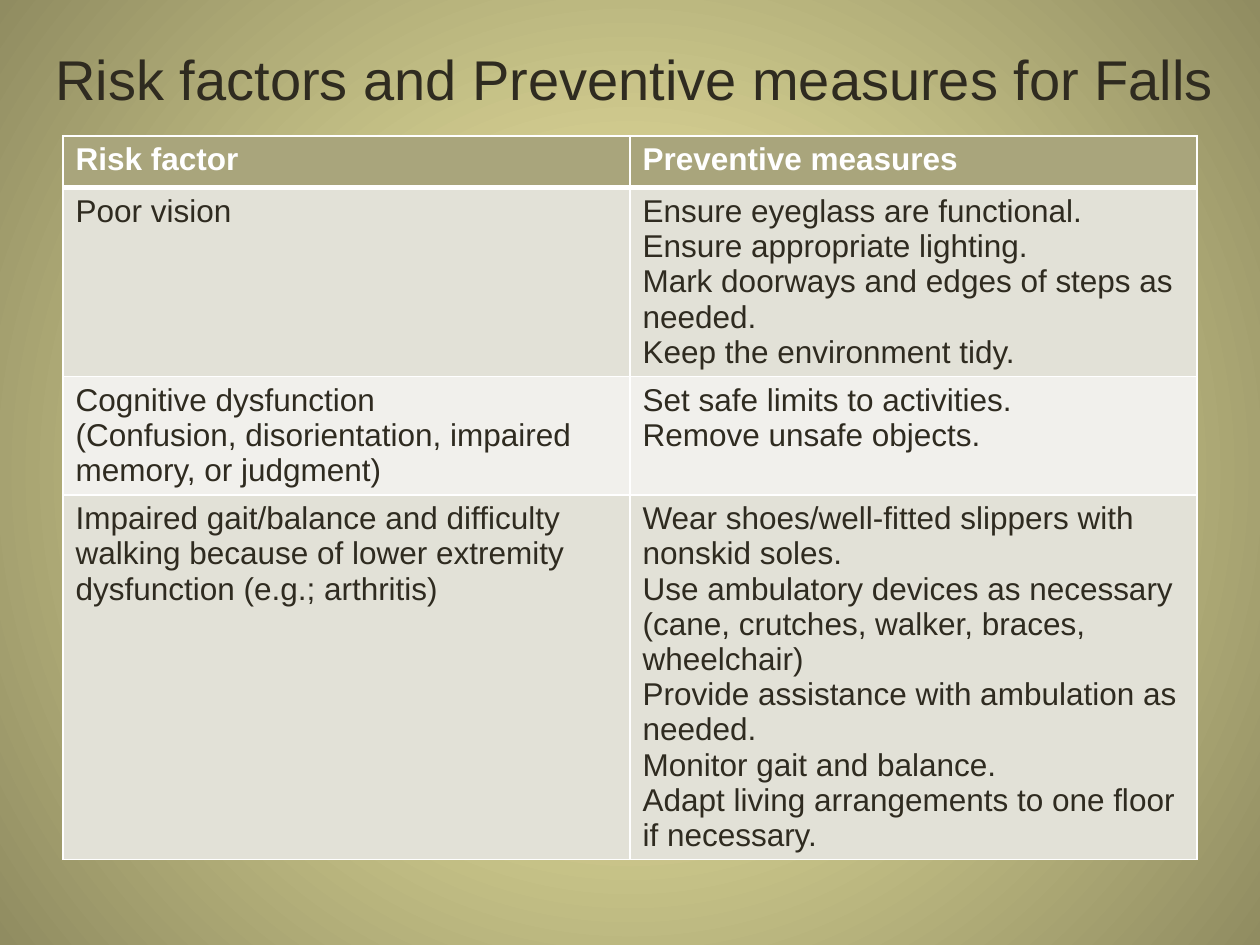
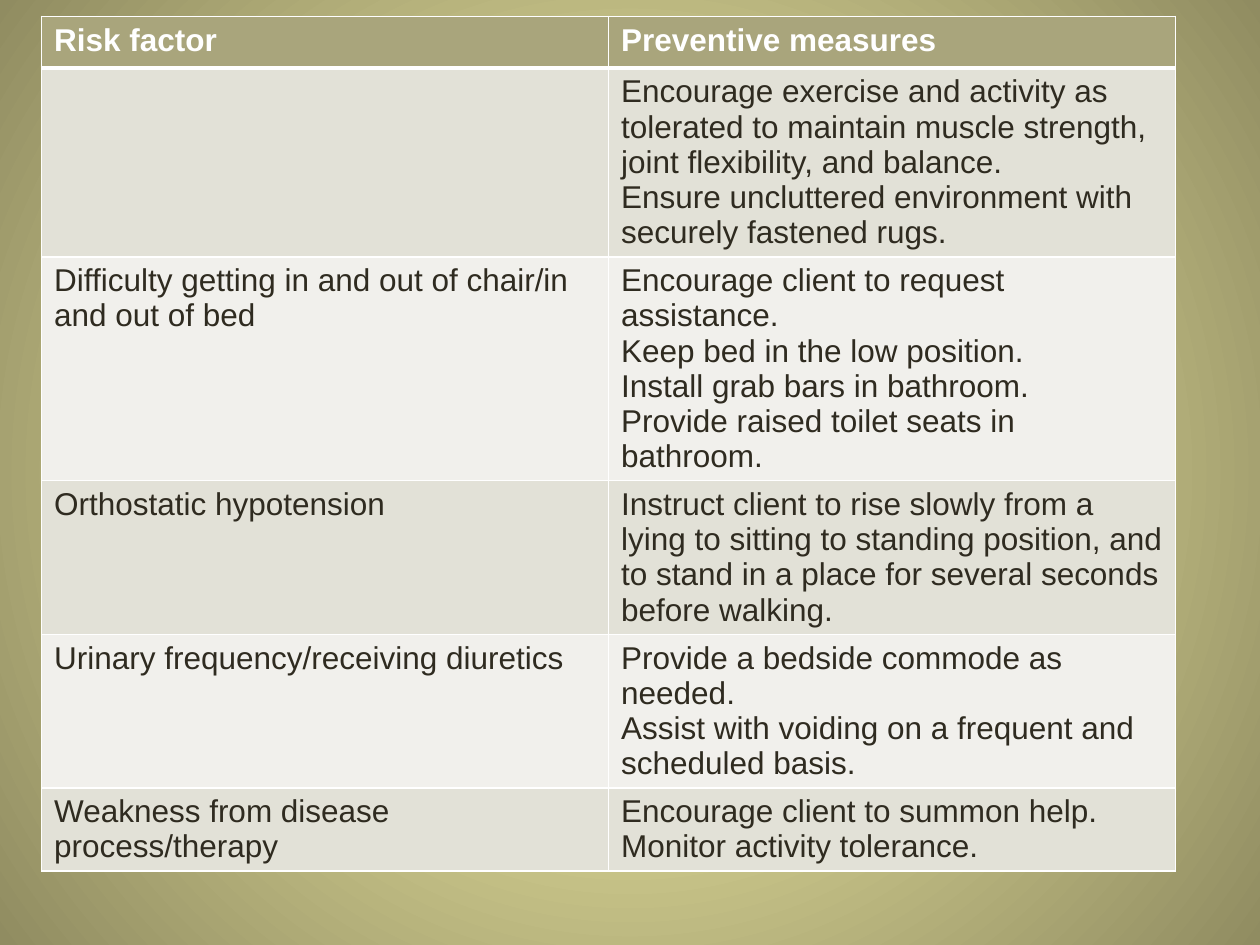
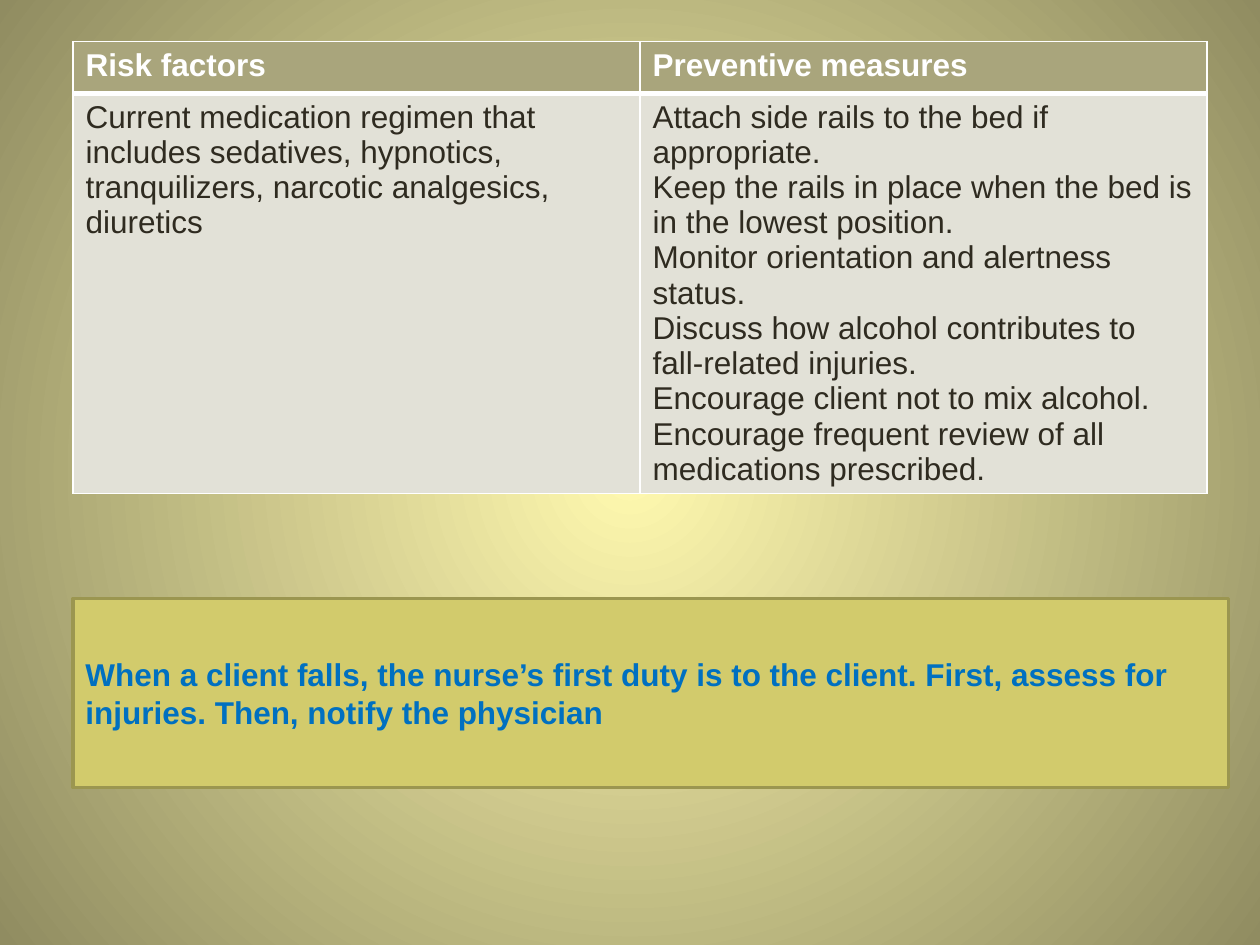
from lxml.etree import SubElement
from pptx import Presentation
from pptx.dml.color import RGBColor
from pptx.enum.shapes import MSO_SHAPE
from pptx.enum.text import MSO_ANCHOR, PP_ALIGN
from pptx.oxml.ns import qn
from pptx.util import Inches, Pt

GLOW = RGBColor(0xFF, 0xF9, 0xAF)
OLIVE = RGBColor(0x90, 0x8C, 0x61)
INK = RGBColor(0x2F, 0x2B, 0x20)
WHITE = RGBColor(0xFF, 0xFF, 0xFF)
HEADER = RGBColor(0xA9, 0xA5, 0x7C)
BANDS = (RGBColor(0xE2, 0xE1, 0xD7), RGBColor(0xF1, 0xF0, 0xEC))
CALLOUT_FILL = RGBColor(0xD2, 0xCB, 0x6C)
CALLOUT_LINE = RGBColor(0x9B, 0x96, 0x50)
BLUE = RGBColor(0x00, 0x70, 0xC0)

FONT = "Arial"
TITLE_FONT = {"size": Pt(32), "bold": False}
HEADER_FONT = {"size": Pt(18), "bold": True}
BODY_FONT = {"size": Pt(18), "bold": False}

COLUMN_WIDTH, ROW_HEIGHT = 4.5, 0.41
CELL_LINE_SPACING = Pt(20.15)
THIN, THICK = 1, 3

# Each table row is (risk factor paragraphs, preventive measure paragraphs).
PAGES = [
    {
        "title": "Risk factors and Preventive measures for Falls",
        "corner": (0.5, 1.08),
        "headings": ("Risk factor", "Preventive measures"),
        "rows": [
            (["Poor vision"],
             ["Ensure eyeglass are functional.",
              "Ensure appropriate lighting.",
              "Mark doorways and edges of steps as needed.",
              "Keep the environment tidy."]),
            (["Cognitive dysfunction",
              "(Confusion, disorientation, impaired memory, or judgment)"],
             ["Set safe limits to activities.",
              "Remove unsafe objects."]),
            (["Impaired gait/balance and difficulty walking because of lower "
              "extremity dysfunction (e.g.; arthritis)"],
             ["Wear shoes/well-fitted slippers with nonskid soles.",
              "Use ambulatory devices as necessary (cane, crutches, walker, "
              "braces, wheelchair)",
              "Provide assistance with ambulation as needed.",
              "Monitor gait and balance.",
              "Adapt living arrangements to one floor if necessary."]),
        ],
    },
    {
        "corner": (0.33, 0.13),
        "headings": ("Risk factor", "Preventive measures"),
        "rows": [
            ([],
             ["Encourage exercise and activity as tolerated to maintain muscle "
              "strength, joint flexibility, and balance.",
              "Ensure uncluttered environment with securely fastened rugs."]),
            (["Difficulty getting in and out of chair/in and out of bed"],
             ["Encourage client to request assistance.",
              "Keep bed in the low position.",
              "Install grab bars in bathroom.",
              "Provide raised toilet seats in bathroom."]),
            (["Orthostatic hypotension"],
             ["Instruct client to rise slowly from a lying to sitting to "
              "standing position, and to stand in a place for several seconds "
              "before walking."]),
            (["Urinary frequency/receiving diuretics"],
             ["Provide a bedside commode as needed.",
              "Assist with voiding on a frequent and scheduled basis."]),
            (["Weakness from disease process/therapy"],
             ["Encourage client to summon help.",
              "Monitor activity tolerance."]),
        ],
    },
    {
        "corner": (0.58, 0.33),
        "headings": ("Risk factors", "Preventive measures"),
        "rows": [
            (["Current medication regimen that includes sedatives, hypnotics, "
              "tranquilizers, narcotic analgesics, diuretics"],
             ["Attach side rails to the bed if appropriate.",
              "Keep the rails in place when the bed is in the lowest position.",
              "Monitor orientation and alertness status.",
              "Discuss how alcohol contributes to fall-related injuries.",
              "Encourage client not to mix alcohol.",
              "Encourage frequent review of all medications prescribed."]),
        ],
        "callout": "When a client falls, the nurse’s first duty is to the client. "
                   "First, assess for injuries. Then, notify the physician",
    },
]


def paint_background(master):
    """Give every slide a round glow that darkens towards the corners."""
    fill = master.background.fill
    fill.gradient()
    for stop, color, position in zip(fill.gradient_stops, (GLOW, OLIVE), (0, 1)):
        stop.color.rgb = color
        stop.position = position
    gradient = next(master.element.iter(qn("a:gradFill")))
    gradient.remove(gradient.find(qn("a:lin")))
    circle = SubElement(gradient, qn("a:path"), path="circle")
    SubElement(circle, qn("a:fillToRect"),
               {side: "50000" for side in ("l", "t", "r", "b")})


def write(frame, lines, font_values, color, align=PP_ALIGN.LEFT, spacing=None):
    for index, line in enumerate(lines):
        para = frame.add_paragraph() if index else frame.paragraphs[0]
        para.alignment = align
        para.line_spacing = spacing
        span = para.add_run()
        span.text = line
        span.font.name = FONT
        span.font.color.rgb = color
        for name, value in font_values.items():
            setattr(span.font, name, value)


def draw_borders(cell, widths):
    """Draw white borders; widths are points for left, right, top, bottom."""
    properties = cell._tc.get_or_add_tcPr()
    for index, (side, width) in enumerate(zip("LRTB", widths)):
        border = SubElement(properties, qn(f"a:ln{side}"), w=str(Pt(width)))
        solid = SubElement(border, qn("a:solidFill"))
        SubElement(solid, qn("a:srgbClr"), val=str(WHITE))
        properties.insert(index, border)


def add_title(page, title):
    box = page.shapes.add_textbox(Inches(0.25), Inches(0.08), Inches(9.58), Inches(1.08))
    frame = box.text_frame
    frame.word_wrap = True
    frame.vertical_anchor = MSO_ANCHOR.MIDDLE
    write(frame, [title], TITLE_FONT, INK, PP_ALIGN.CENTER)


def add_risk_table(page, corner, headings, rows):
    grid = [tuple([heading] for heading in headings)] + rows
    left, top = map(Inches, corner)
    table = page.shapes.add_table(
        len(grid), len(headings), left, top,
        Inches(COLUMN_WIDTH * len(headings)), Inches(ROW_HEIGHT * len(grid))).table
    for row_index, entries in enumerate(grid):
        table.rows[row_index].height = Inches(ROW_HEIGHT)
        is_header = row_index == 0
        for column_index, lines in enumerate(entries):
            cell = table.cell(row_index, column_index)
            cell.fill.solid()
            cell.fill.fore_color.rgb = HEADER if is_header else BANDS[(row_index - 1) % 2]
            draw_borders(cell, (THIN, THIN,
                                THICK if row_index == 1 else THIN,
                                THICK if is_header else THIN))
            write(cell.text_frame, lines,
                  HEADER_FONT if is_header else BODY_FONT,
                  WHITE if is_header else INK,
                  spacing=CELL_LINE_SPACING)


def add_callout(page, message):
    box = page.shapes.add_shape(MSO_SHAPE.RECTANGLE, Inches(0.58), Inches(4.75),
                                Inches(9.17), Inches(1.5))
    box.shadow.inherit = False
    box.fill.solid()
    box.fill.fore_color.rgb = CALLOUT_FILL
    box.line.color.rgb = CALLOUT_LINE
    box.line.width = Pt(2)
    frame = box.text_frame
    frame.word_wrap = True
    frame.vertical_anchor = MSO_ANCHOR.MIDDLE
    write(frame, [message], HEADER_FONT, BLUE)


def main():
    deck = Presentation()
    deck.slide_width, deck.slide_height = Inches(10), Inches(7.5)
    paint_background(deck.slide_master)
    for content in PAGES:
        page = deck.slides.add_slide(deck.slide_layouts[6])
        if "title" in content:
            add_title(page, content["title"])
        add_risk_table(page, content["corner"], content["headings"], content["rows"])
        if "callout" in content:
            add_callout(page, content["callout"])
    deck.save("out.pptx")


if __name__ == "__main__":
    main()
